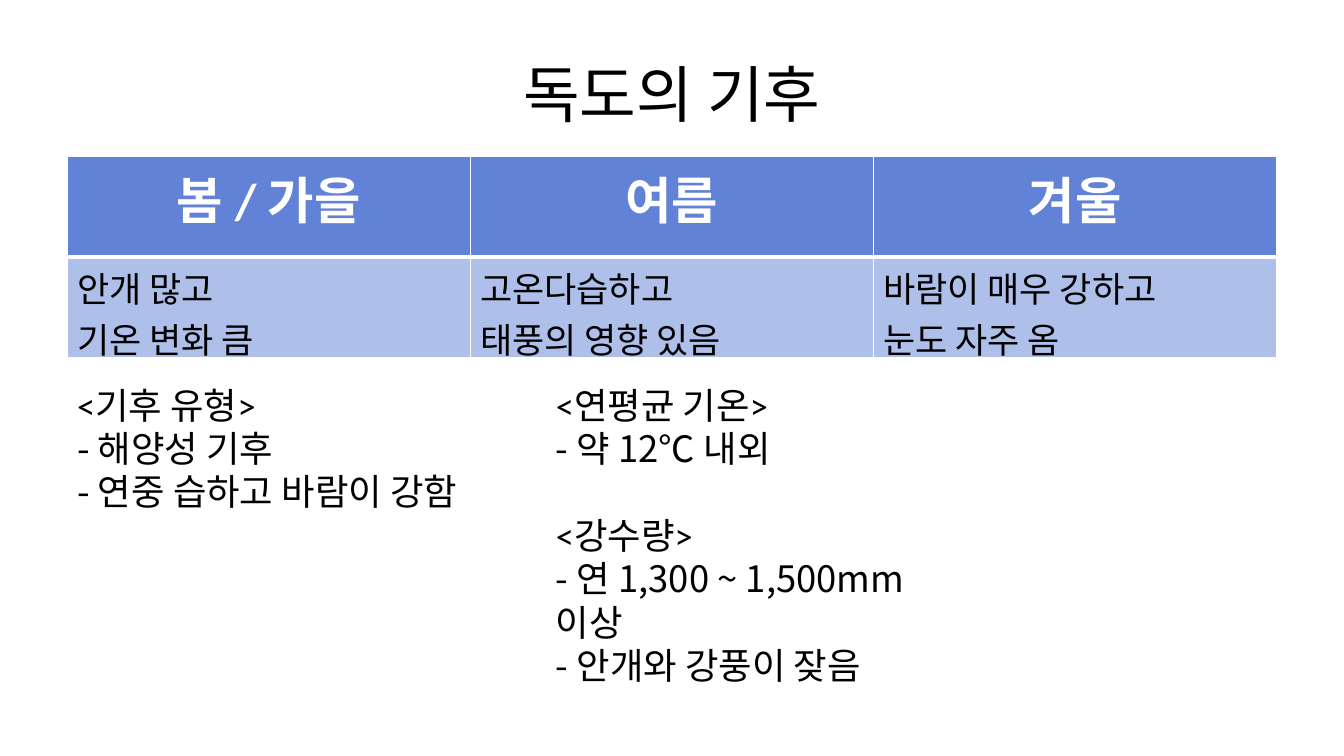
import pptx
import pptx.dml.color
import pptx.enum.text
import pptx.oxml
import pptx.oxml.ns
import pptx.util
from dataclasses import dataclass

Pt = pptx.util.Pt
RGB = pptx.dml.color.RGBColor.from_string
PP_ALIGN = pptx.enum.text.PP_ALIGN
MSO_ANCHOR = pptx.enum.text.MSO_ANCHOR
MSO_AUTO_SIZE = pptx.enum.text.MSO_AUTO_SIZE


@dataclass
class Theme:
    text: str = "000000"
    white: str = "FFFFFF"
    header: str = "6182D6"
    body: str = "AEBFEA"
    latin: str = "Calibri"
    korean: str = "Noto Sans CJK KR"
    title_size: int = 44
    header_size: int = 36
    cell_size: int = 25
    note_size: int = 26
    note_line: int = 31


class ClimateSlide:
    """Draws titles, tables and notes on one slide in a shared theme."""

    def __init__(self, prs, theme):
        self.s = prs.slides.add_slide(prs.slide_layouts[6])
        self.theme = theme

    def style(self, p, size, color, font=None, bold=False):
        p.font.size = Pt(size)
        p.font.bold = bold
        p.font.color.rgb = RGB(color)
        p.font.name = font or self.theme.latin
        ea = pptx.oxml.parse_xml(
            f'<a:ea {pptx.oxml.ns.nsdecls("a")} typeface="{self.theme.korean}"/>')
        p.font._rPr.append(ea)

    def paragraphs(self, tf, lines):
        for i, line in enumerate(lines):
            p = tf.add_paragraph() if i else tf.paragraphs[0]
            p.text = line
            yield p

    def box(self, x, y, w, h):
        tf = self.s.shapes.add_textbox(Pt(x), Pt(y), Pt(w), Pt(h)).text_frame
        tf.word_wrap = True
        return tf

    def title(self, text, x, y, w, h):
        tf = self.box(x, y, w, h)
        tf.vertical_anchor = MSO_ANCHOR.MIDDLE
        for p in self.paragraphs(tf, [text]):
            p.alignment = PP_ALIGN.CENTER
            self.style(p, self.theme.title_size, self.theme.text)

    def notes(self, sections, x, y, w, h):
        t = self.theme
        tf = self.box(x, y, w, h)
        tf.auto_size = MSO_AUTO_SIZE.SHAPE_TO_FIT_TEXT
        lines = [line for section in sections for line in section]
        for i, p in enumerate(self.paragraphs(tf, lines)):
            heading = p.text.startswith("<")
            p.line_spacing = Pt(t.note_line)
            if heading and i:
                p.space_before = Pt(t.note_line)
            self.style(p, t.note_size, t.text, t.latin if heading else t.korean)

    def borders(self, cell, **widths):
        tcPr = cell._tc.get_or_add_tcPr()
        for i, side in enumerate("LRTB"):
            tcPr.insert(i, pptx.oxml.parse_xml(
                f'<a:ln{side} {pptx.oxml.ns.nsdecls("a")} w="{Pt(widths.get(side, 1))}">'
                f'<a:solidFill><a:srgbClr val="{self.theme.white}"/></a:solidFill>'
                f'</a:ln{side}>'))

    def table(self, seasons, x, y, w, h):
        t = self.theme
        table = self.s.shapes.add_table(
            2, len(seasons), Pt(x), Pt(y), Pt(w), Pt(h)).table
        for col, (season, weather) in enumerate(seasons.items()):
            head, body = table.cell(0, col), table.cell(1, col)
            for cell, color in ((head, t.header), (body, t.body)):
                cell.fill.solid()
                cell.fill.fore_color.rgb = RGB(color)
            self.borders(head, B=3)
            self.borders(body, T=3)
            for p in self.paragraphs(head.text_frame, [season]):
                p.alignment = PP_ALIGN.CENTER
                self.style(p, t.header_size, t.white, bold=True)
            for p in self.paragraphs(body.text_frame, weather):
                self.style(p, t.cell_size, t.text)


def main():
    prs = pptx.Presentation()
    prs.slide_width, prs.slide_height = Pt(960), Pt(540)
    slide = ClimateSlide(prs, Theme())
    left, width = 48, 864
    slide.title("독도의 기후", left, 21.6, width, 90)
    slide.table({
        "봄 / 가을": ["안개 많고", "기온 변화 큼"],
        "여름": ["고온다습하고", "태풍의 영향 있음"],
        "겨울": ["바람이 매우 강하고", "눈도 자주 옴"],
    }, left, 111.6, width, 144)
    slide.notes([
        ["<기후 유형>", "- 해양성 기후", "- 연중 습하고 바람이 강함"],
    ], left, 270, 371, 100)
    slide.notes([
        ["<연평균 기온>", "- 약 12℃ 내외"],
        ["<강수량>", "- 연 1,300 ~ 1,500mm이상", "- 안개와 강풍이 잦음"],
    ], 390, 270, 311, 224.6)
    prs.save("out.pptx")


if __name__ == "__main__":
    main()
